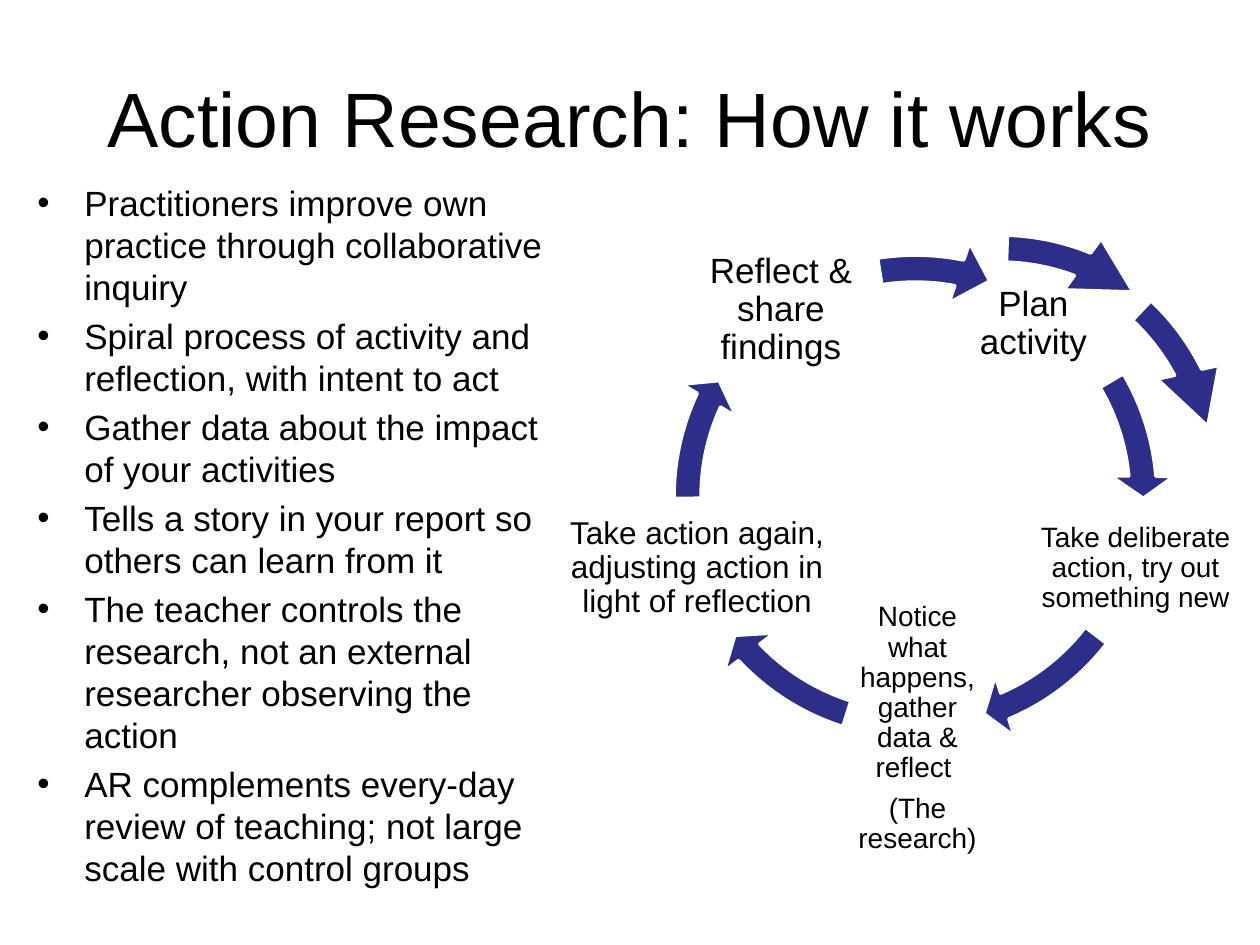
from pptx import Presentation
from pptx.dml.color import RGBColor
from pptx.enum.shapes import MSO_SHAPE
from pptx.enum.text import MSO_ANCHOR, PP_ALIGN
from pptx.oxml.ns import qn
from pptx.util import Pt
from lxml import etree

PX = 7257.14  # EMU per px: 126 px to the inch
BLACK = RGBColor(0x00, 0x00, 0x00)
WHITE = RGBColor(0xFF, 0xFF, 0xFF)
INDIGO = RGBColor(0x2D, 0x2D, 0x8A)
FONT = "Arial"
CENTER, LEFT = PP_ALIGN.CENTER, PP_ALIGN.LEFT
MIDDLE, TOP = MSO_ANCHOR.MIDDLE, MSO_ANCHOR.TOP
CIRCULAR_ARROW = MSO_SHAPE.CIRCULAR_ARROW


def px(*lengths):
    return [round(length * PX) for length in lengths]


def add_text(box, lines, size, align=CENTER, anchor=MIDDLE, inset=None):
    """Add a wrapped text box and return its paragraphs."""
    frame = slide.shapes.add_textbox(*px(*box)).text_frame
    frame.word_wrap = True
    frame.vertical_anchor = anchor
    if inset is not None:
        frame.margin_left = frame.margin_right = px(inset)[0]
        frame.margin_top = frame.margin_bottom = px(inset)[0]
    for index, line in enumerate(lines):
        paragraph = frame.add_paragraph() if index else frame.paragraphs[0]
        paragraph.alignment = align
        run = paragraph.add_run()
        run.text = line
        run.font.name = FONT
        run.font.size = Pt(size)
        run.font.color.rgb = BLACK
    return frame.paragraphs


prs = Presentation()
prs.slide_width, prs.slide_height = px(1260, 945)
slide = prs.slides.add_slide(prs.slide_layouts[6])

# Title
add_text((63, 38, 1134, 157), ["Action Research: How it works"], 44)

# Steps of the cycle: box, text size, lines
steps = [
    ((964, 255, 139, 139), 20, ["Plan activity"]),
    ((1033, 499, 205, 139), 16, ["Take deliberate action, try out something new"]),
    ((848, 605, 139, 247), 16,
     ["Notice what happens, gather data & reflect ", "(The research)"]),
    ((563, 499, 268, 139), 18,
     ["Take action again, adjusting action in light of reflection"]),
    ((679, 241, 204, 139), 20, ["Reflect & share findings"]),
]
for box, size, lines in steps:
    for paragraph in add_text(box, lines, size, inset=3):
        paragraph.line_spacing = 0.9
        paragraph.space_after = Pt(size * 0.35)

# Arrows: left, top, rotation, then head width, end and start in degrees
arrows = [
    (656, 237, 0, 5.6, 354.88, 329.44),
    (656, 237, 0, 5.6, 66.9, 37.56),
    (656, 237, 0, 5.6, 136.84, 107.5),
    (656, 237, 0, 5.6, 204.96, 179.52),
    (656, 237, 0, 7.96, 281.09, 260.98),
    (740, 217, 10.3, 14.54, 281.09, 261.58),
    (726, 217, 51.7, 14.54, 281.09, 261.58),
]
for left, top, rotation, head, end, start in arrows:
    arrow = slide.shapes.add_shape(CIRCULAR_ARROW, *px(left, top, 519, 519))
    arrow.rotation = rotation
    arrow.shadow.inherit = False
    arrow.fill.solid()
    arrow.fill.fore_color.rgb = INDIGO
    arrow.line.color.rgb = WHITE
    arrow.line.width = Pt(2)
    # One degree is 60000 units, and an adjustment of 1.0 is 100000
    for index, value in enumerate((0.052, head * 0.6, end * 0.6, start * 0.6, 0.061)):
        arrow.adjustments[index] = value

# Bulleted points
points = [
    "Practitioners improve own practice through collaborative inquiry",
    "Spiral process of activity and reflection, with intent to act",
    "Gather data about the impact of your activities",
    "Tells a story in your report so others can learn from it",
    "The teacher controls the research, not an external researcher observing the action",
    "AR complements every-day review of teaching; not large scale with control groups",
]
indent = px(47)[0]
for paragraph in add_text((25, 175, 556, 725), points, 20, LEFT, TOP):
    paragraph.space_before = Pt(4)
    properties = paragraph._p.get_or_add_pPr()
    properties.set("marL", str(indent))
    properties.set("indent", str(-indent))
    etree.SubElement(properties, qn("a:buFont")).set("typeface", FONT)
    etree.SubElement(properties, qn("a:buChar")).set("char", "•")

prs.save("out.pptx")
